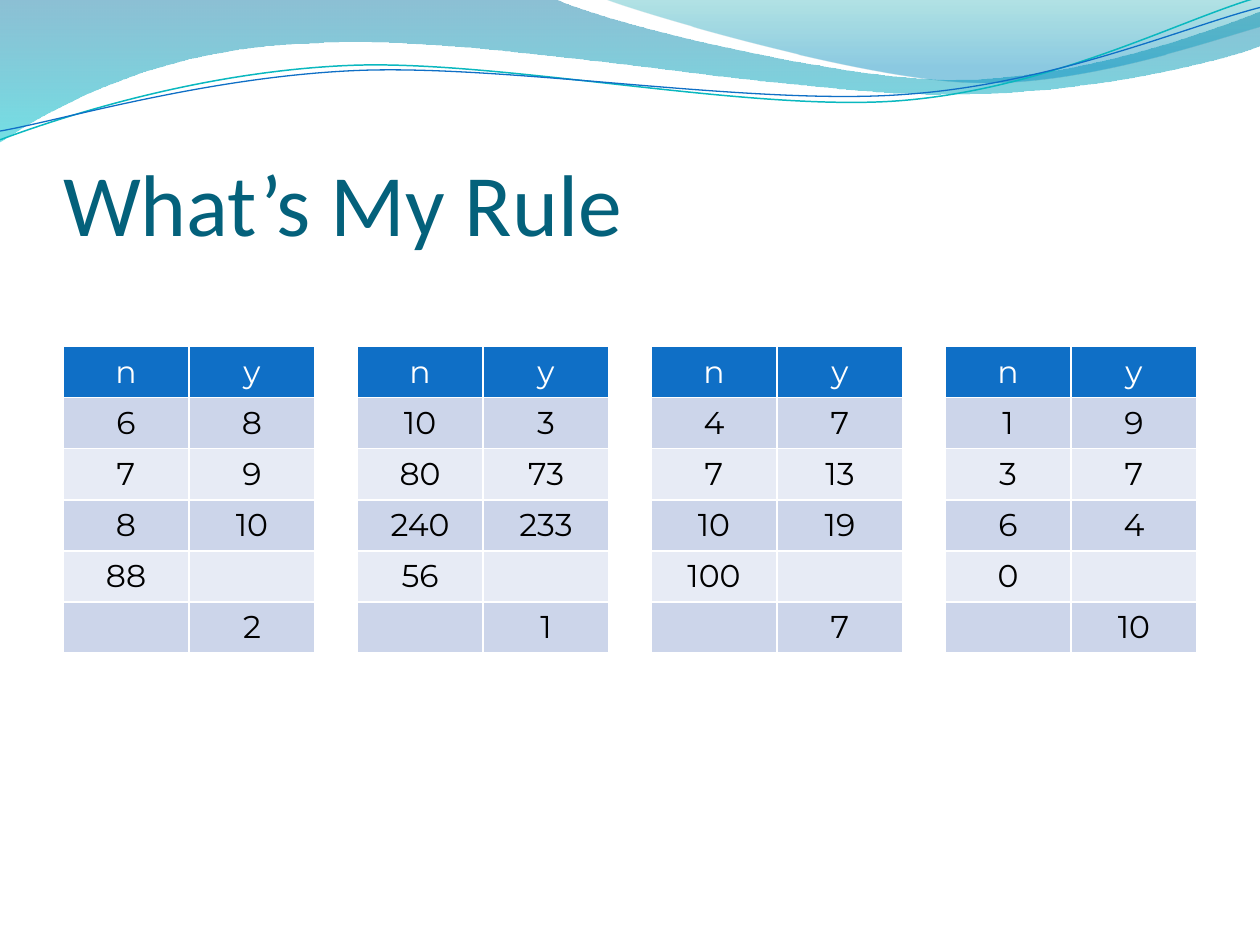
from dataclasses import dataclass
from math import cos, radians, sin

from lxml.etree import SubElement
from pptx import Presentation
from pptx.dml.color import RGBColor
from pptx.enum.text import MSO_ANCHOR as Anchor, MSO_AUTO_SIZE as AutoSize, PP_ALIGN as Align
from pptx.oxml.ns import qn
from pptx.util import Pt


@dataclass(frozen=True)
class Theme:
    title_font: str = "Calibri"
    table_font: str = "Montserrat"
    title_size: float = 50
    table_size: float = 18
    title: str = "04617B"
    header: str = "0F6FC6"
    header_text: str = "FFFFFF"
    text: str = "000000"
    bands: tuple = ("CCD5EA", "E7EBF5")
    border: str = "FFFFFF"
    teal_line: str = "0AB8BF"
    blue_line: str = "0F6FC6"
    wide_wave: tuple = ((0, "0074A1", 45), (100, "00C6CF", 55))
    right_wave: tuple = ((0, "00A1A9", 30), (80, "008BBF", 45))


WIDE_WAVE = [
    [(0, 0)],
    [(316.8, -0.7)],
    [(342.7, 12.2), (478.1, 45.4), (545.8, 45.4)],
    [(614.2, 45.4), (689.8, 18.7), (720, 6.5)],
    [(720.7, 25.9)],
    [(707.8, 31.7), (626.4, 54.7), (537.1, 54)],
    [(447.8, 54), (275, 20.2), (185, 24.5)],
    [(92.9, 25.9), (33.1, 59.8), (-0.7, 81.4)],
    [(0, 0)],
]
RIGHT_WAVE = [
    [(344.9, -0.7)],
    [(366.5, 7.9), (491, 44.6), (553.7, 46.8)],
    [(616.3, 49.7), (691.9, 23), (720, 15.1)],
    [(720, 0)],
    [(344.9, -0.7)],
]
TEAL_CURVE = [
    [(0, 79.9)],
    [(34.6, 67), (113.8, 41), (199.4, 37.4)],
    [(284.4, 33.8), (427, 64.1), (513.4, 57.6)],
    [(599.8, 51.1), (675.4, 10.8), (718.6, -1.4)],
]
BLUE_CURVE = [
    [(0, 74.9)],
    [(33.8, 69.1), (118.1, 43.9), (203.8, 40.3)],
    [(290.2, 36.7), (429.8, 60.5), (516.2, 54)],
    [(601.9, 48.2), (677.5, 15.1), (720, 4.3)],
]
TILT = -2.7
RULES = [
    [("6", "8"), ("7", "9"), ("8", "10"), ("88", ""), ("", "2")],
    [("10", "3"), ("80", "73"), ("240", "233"), ("56", ""), ("", "1")],
    [("4", "7"), ("7", "13"), ("10", "19"), ("100", ""), ("", "7")],
    [("1", "9"), ("3", "7"), ("6", "4"), ("0", ""), ("", "10")],
]


def turn(segments, degrees, center_x=359.5, center_y=41.5):
    c, s = cos(radians(degrees)), sin(radians(degrees))
    return [[(center_x + (x - center_x) * c - (y - center_y) * s,
              center_y + (x - center_x) * s + (y - center_y) * c) for x, y in segment]
            for segment in segments]


class SlideBuilder:
    def __init__(self, page, theme):
        self.page = page
        self.theme = theme

    def style(self, para, font, size, color, align):
        para.alignment = align
        for span in para.runs:
            span.font.name = font
            span.font.size = Pt(size)
            span.font.bold = False
            span.font.color.rgb = RGBColor.from_string(color)

    def outline(self, segments, closed):
        start, *ends = [(Pt(segment[-1][0]), Pt(segment[-1][1])) for segment in segments]
        builder = self.page.shapes.build_freeform(*start, scale=1.0)
        builder.add_line_segments(ends, close=closed)
        shape = builder.convert_to_shape()
        shape.shadow.inherit = False
        for node, segment in zip(list(shape.element.iter(qn("a:lnTo"))), segments[1:]):
            if len(segment) == 3:
                bezier = SubElement(node.getparent(), qn("a:cubicBezTo"))
                for x, y in segment:
                    SubElement(bezier, qn("a:pt"), x=str(Pt(x) - shape.left), y=str(Pt(y) - shape.top))
                node.getparent().replace(node, bezier)
        return shape

    def wave(self, segments, stops):
        shape = self.outline(segments, True)
        shape.line.fill.background()
        shape.fill.gradient()
        shape.fill.gradient_angle = 270
        for stop, (position, color, _) in zip(shape.fill.gradient_stops, stops):
            stop.position = position / 100
            stop.color.rgb = RGBColor.from_string(color)
        for node, (_, _, opacity) in zip(shape.element.iter(qn("a:srgbClr")), stops):
            SubElement(node, qn("a:alpha"), val=str(opacity * 1000))

    def curve(self, segments, color, width):
        shape = self.outline(turn(segments, -TILT), False)
        shape.rotation = TILT
        shape.fill.background()
        shape.line.color.rgb = RGBColor.from_string(color)
        shape.line.width = Pt(width)

    def title(self, text, left, top, width, height):
        box = self.page.shapes.title
        box.left, box.top, box.width, box.height = Pt(left), Pt(top), Pt(width), Pt(height)
        frame = box.text_frame
        frame.text = text
        frame.auto_size = AutoSize.NONE
        frame.vertical_anchor = Anchor.BOTTOM
        frame.margin_left = frame.margin_right = frame.margin_bottom = 0
        frame.margin_top = Pt(3.6)
        self.style(frame.paragraphs[0], self.theme.title_font, self.theme.title_size,
                   self.theme.title, Align.LEFT)

    def borders(self, cell):
        properties = cell._tc.get_or_add_tcPr()
        for side in "LRTB":
            line = SubElement(properties, qn(f"a:ln{side}"), w=str(Pt(1)))
            fill = SubElement(line, qn("a:solidFill"))
            SubElement(fill, qn("a:srgbClr"), val=self.theme.border)

    def table(self, pairs, left, top, width, row_height):
        rows = [("n", "y"), *pairs]
        table = self.page.shapes.add_table(len(rows), 2, Pt(left), Pt(top), Pt(width),
                                           Pt(row_height * len(rows))).table
        for row_index, values in enumerate(rows):
            table.rows[row_index].height = Pt(row_height)
            header = row_index == 0
            fill = self.theme.header if header else self.theme.bands[(row_index - 1) % 2]
            color = self.theme.header_text if header else self.theme.text
            for column, value in enumerate(values):
                cell = table.cell(row_index, column)
                self.borders(cell)
                cell.fill.solid()
                cell.fill.fore_color.rgb = RGBColor.from_string(fill)
                if value:
                    cell.text_frame.text = value
                    self.style(cell.text_frame.paragraphs[0], self.theme.table_font,
                               self.theme.table_size, color, Align.CENTER)


def main():
    deck = Presentation()
    deck.slide_width, deck.slide_height = Pt(720), Pt(540)
    theme = Theme()
    slide = SlideBuilder(deck.slides.add_slide(deck.slide_layouts[5]), theme)
    slide.wave(WIDE_WAVE, theme.wide_wave)
    slide.wave(RIGHT_WAVE, theme.right_wave)
    slide.curve(TEAL_CURVE, theme.teal_line, 0.85)
    slide.curve(BLUE_CURVE, theme.blue_line, 0.75)
    slide.title("What’s My Rule", 36, 55.2, 648, 90)
    for index, pairs in reversed(list(enumerate(RULES))):
        slide.table(pairs, 36 + 168 * index, 198, 144, 29.2)
    deck.save("out.pptx")


if __name__ == "__main__":
    main()
